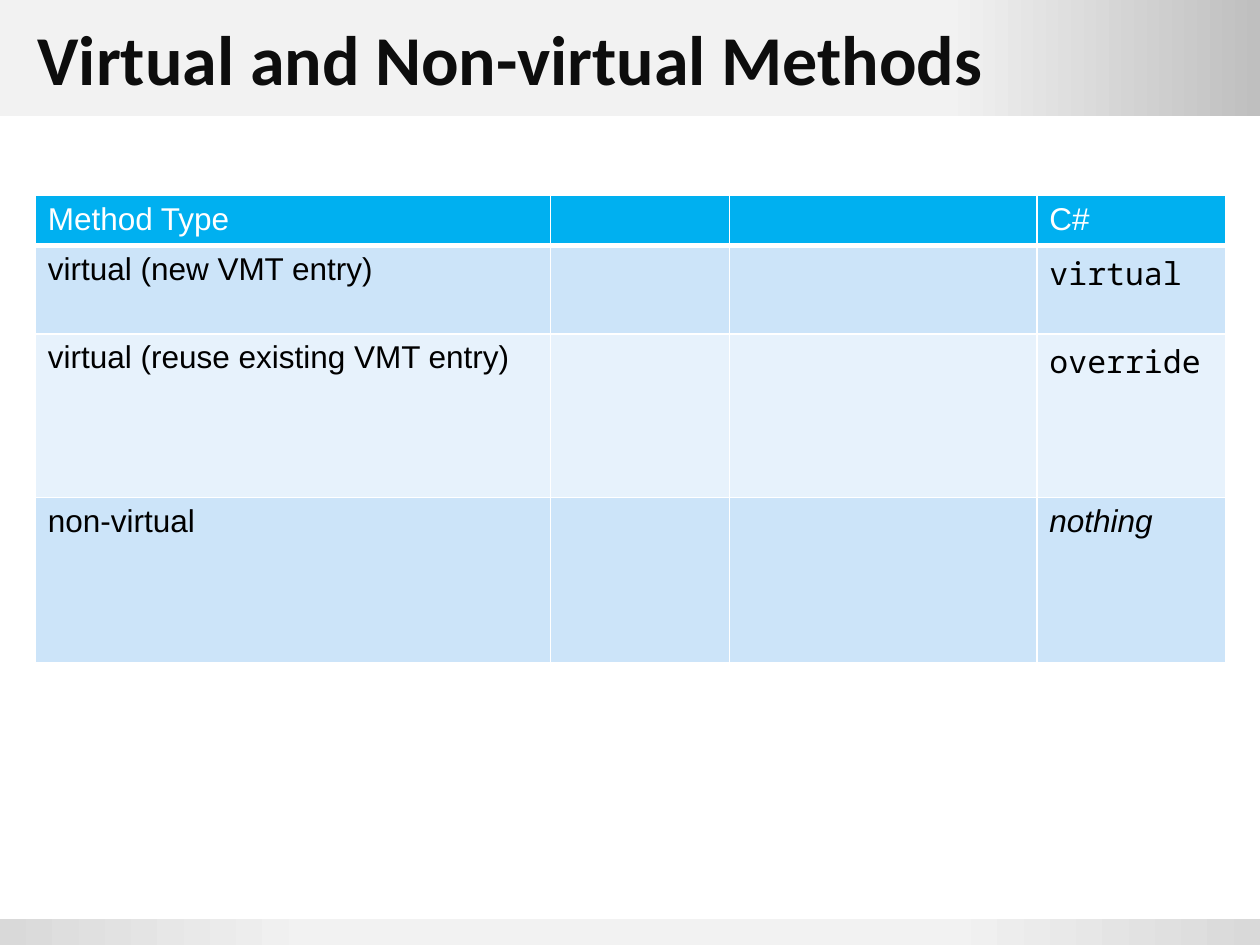
"""Build a slide with a table of virtual and non-virtual method keywords."""
import lxml.etree
import pptx
import pptx.dml.color
import pptx.enum.shapes
import pptx.enum.text
import pptx.oxml
import pptx.oxml.ns
import pptx.util

Inches = pptx.util.Inches
Pt = pptx.util.Pt
qn = pptx.oxml.ns.qn


def color(value):
    return pptx.dml.color.RGBColor.from_string(value)


def add_color(parent, value):
    lxml.etree.SubElement(parent, qn("a:srgbClr"), val=value)


presentation = pptx.Presentation()
presentation.slide_width = Inches(10)
presentation.slide_height = Inches(7.5)
slide = presentation.slides.add_slide(presentation.slide_layouts[6])

bands = [
    (0, 0.92, [(75, "F2F2F2"), (100, "BFBFBF")]),
    (7.29, 0.21, [(0, "D9D9D9"), (25, "F2F2F2"), (75, "F2F2F2"), (100, "D9D9D9")]),
]
for top, height, stops in bands:
    band = slide.shapes.add_shape(
        pptx.enum.shapes.MSO_SHAPE.RECTANGLE, 0, Inches(top), Inches(10), Inches(height))
    band.shadow.inherit = False
    band.line.fill.background()
    band.fill.gradient()
    band.fill.gradient_angle = 0
    stop_list = band.fill._fill._gradFill.find(qn("a:gsLst"))
    for old_stop in list(stop_list):
        stop_list.remove(old_stop)
    for position, value in stops:
        stop = lxml.etree.SubElement(stop_list, qn("a:gs"), pos=str(position * 1000))
        add_color(stop, value)

title = slide.shapes.add_textbox(Inches(0.2), 0, Inches(9.61), Inches(0.92))
title.text_frame.word_wrap = True
title.text_frame.vertical_anchor = pptx.enum.text.MSO_ANCHOR.MIDDLE
title.text_frame.text = "Virtual and Non-virtual Methods"
title_font = title.text_frame.paragraphs[0].runs[0].font
title_font.name = "Calibri"
title_font.size = Pt(40)
title_font.bold = True
title_font.color.rgb = color("0D0D0D")

column_widths = [4.09, 1.42, 2.44, 1.5]
row_heights = [0.4, 0.7, 1.3, 1.31]
row_fills = ["00B0F0", "CCE4F9", "E7F2FC", "CCE4F9"]
rows = [
    ("Method Type", "", "", "C#"),
    ("virtual (new VMT entry)", "", "", "virtual"),
    ("virtual (reuse existing VMT entry)", "", "", "override"),
    ("non-virtual", "", "", "nothing"),
]
keywords = ("virtual", "override")

table = slide.shapes.add_table(
    len(rows), len(column_widths), Inches(0.28), Inches(1.55),
    Inches(sum(column_widths)), Inches(sum(row_heights))).table
table.first_row = False
table.horz_banding = False
for column, width in zip(table.columns, column_widths):
    column.width = Inches(width)
for row, height in zip(table.rows, row_heights):
    row.height = Inches(height)

for row_index, texts in enumerate(rows):
    for column_index, text in enumerate(texts):
        cell = table.cell(row_index, column_index)
        properties = cell._tc.get_or_add_tcPr()
        for side in ("L", "R", "T", "B"):
            width = 3 if row_index == 0 and side == "B" else 1
            border = lxml.etree.SubElement(properties, qn("a:ln" + side), w=str(Pt(width)))
            add_color(lxml.etree.SubElement(border, qn("a:solidFill")), "FFFFFF")
        cell.fill.solid()
        cell.fill.fore_color.rgb = color(row_fills[row_index])
        cell.text_frame.text = text
        for run in cell.text_frame.paragraphs[0].runs:
            run.font.name = "Noto Sans Mono" if text in keywords else "Arial"
            run.font.size = Pt(18)
            run.font.italic = text == "nothing"
            run.font.color.rgb = color("FFFFFF" if row_index == 0 else "000000")

presentation.save("out.pptx")
